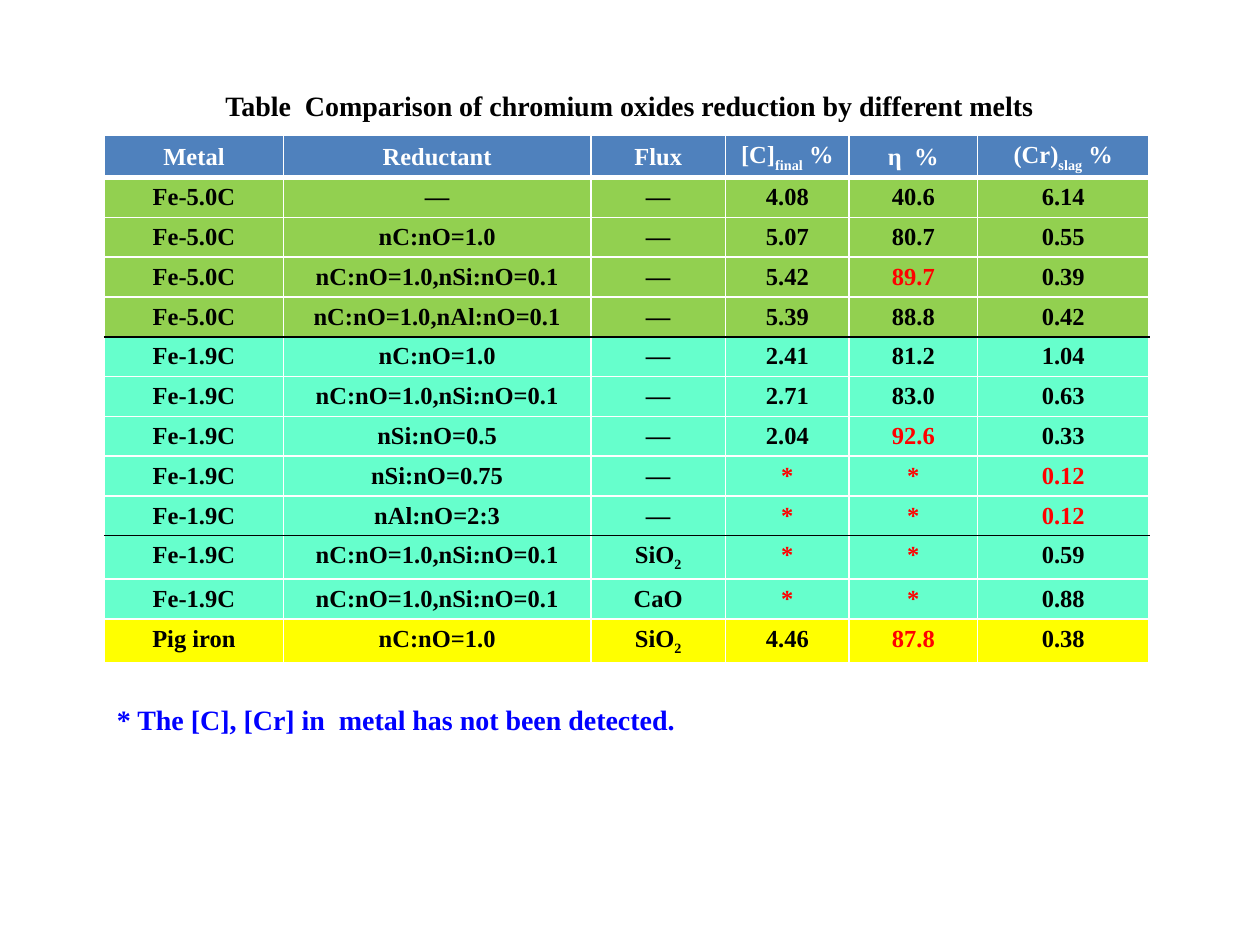
"""Builds a slide with a table comparing chromium oxide reduction by melt."""
from lxml import etree
from pptx import Presentation
from pptx.dml.color import RGBColor
from pptx.enum.text import MSO_ANCHOR, MSO_AUTO_SIZE, PP_ALIGN
from pptx.oxml.ns import qn
from pptx.util import Inches, Pt

CENTER, LEFT = PP_ALIGN.CENTER, PP_ALIGN.LEFT
TOP, MIDDLE = MSO_ANCHOR.TOP, MSO_ANCHOR.MIDDLE
GROW = MSO_AUTO_SIZE.SHAPE_TO_FIT_TEXT

WHITE, BLACK, RED, BLUE = "FFFFFF", "000000", "FF0000", "0000FF"
HEADER_FILL, GREEN, AQUA, YELLOW = "4F81BD", "92D050", "66FFCC", "FFFF00"
FILLS = [HEADER_FILL] + [GREEN] * 4 + [AQUA] * 7 + [YELLOW]
RED_VALUES = {"*", "89.7", "92.6", "87.8", "0.12"}
RULES_BELOW = {0: (WHITE, 3), 4: (BLACK, 1), 9: (BLACK, 1)}
PLAIN_RULE = (WHITE, 1)

COLUMN_WIDTHS = [1.42, 2.44, 1.07, 0.98, 1.02, 1.36]
HEADER_HEIGHT = Inches(0.34)
BODY_HEIGHT = Inches(3.16) // 10
SUBSCRIPT_HEIGHT = Inches(0.69) // 2

ROWS = [
    ["Metal", "Reductant", "Flux", "[C]_final_ %", "η  %", "(Cr)_slag_ %"],
    ["Fe-5.0C", "—", "—", "4.08", "40.6", "6.14"],
    ["Fe-5.0C", "nC:nO=1.0", "—", "5.07", "80.7", "0.55"],
    ["Fe-5.0C", "nC:nO=1.0,nSi:nO=0.1", "—", "5.42", "89.7", "0.39"],
    ["Fe-5.0C", "nC:nO=1.0,nAl:nO=0.1", "—", "5.39", "88.8", "0.42"],
    ["Fe-1.9C", "nC:nO=1.0", "—", "2.41", "81.2", "1.04"],
    ["Fe-1.9C", "nC:nO=1.0,nSi:nO=0.1", "—", "2.71", "83.0", "0.63"],
    ["Fe-1.9C", "nSi:nO=0.5", "—", "2.04", "92.6", "0.33"],
    ["Fe-1.9C", "nSi:nO=0.75", "—", "*", "*", "0.12"],
    ["Fe-1.9C", "nAl:nO=2:3", "—", "*", "*", "0.12"],
    ["Fe-1.9C", "nC:nO=1.0,nSi:nO=0.1", "SiO_2_", "*", "*", "0.59"],
    ["Fe-1.9C", "nC:nO=1.0,nSi:nO=0.1", "CaO", "*", "*", "0.88"],
    ["Pig iron", "nC:nO=1.0", "SiO_2_", "4.46", "87.8", "0.38"],
]


def rgb(value):
    """Turn a hex string into a colour."""
    return RGBColor.from_string(value)


def write(frame, text, size=14, color=BLACK, align=LEFT, font="Times New Roman"):
    """Write bold text in which underscores enclose subscripts."""
    para = frame.paragraphs[0]
    para.alignment = align
    for index, part in enumerate(text.split("_")):
        if not part:
            continue
        span = para.add_run()
        span.text = part
        span.font.name = font
        span.font.size = Pt(size)
        span.font.bold = True
        span.font.color.rgb = rgb(color)
        if index % 2:
            span.font._element.set("baseline", "-25000")
    return para


def set_borders(cell, above, below):
    """Draw the four cell borders, which precede the fill."""
    sides = {"a:lnL": PLAIN_RULE, "a:lnR": PLAIN_RULE, "a:lnT": above, "a:lnB": below}
    properties = cell._tc.get_or_add_tcPr()
    for position, (tag, (color, width)) in enumerate(sides.items()):
        line = etree.Element(qn(tag), w=str(Pt(width)))
        fill = etree.SubElement(line, qn("a:solidFill"))
        etree.SubElement(fill, qn("a:srgbClr"), val=color)
        properties.insert(position, line)


class SlideBuilder:
    """Holds the page and draws each kind of element on it."""

    def __init__(self, deck):
        """Add a blank page to the deck."""
        self.page = deck.slides.add_slide(deck.slide_layouts[6])

    def text(self, text, left, top, width, height, wrap=True, **style):
        """Add a text box and return its paragraph."""
        box = self.page.shapes.add_textbox(*map(Inches, (left, top, width, height)))
        box.text_frame.word_wrap = wrap
        box.text_frame.auto_size = GROW
        return write(box.text_frame, text, **style)

    def table(self, rows, left, top, widths):
        """Add the table with its row heights, fills and rules."""
        heights = [HEADER_HEIGHT] + [
            SUBSCRIPT_HEIGHT if "_" in "".join(row) else BODY_HEIGHT for row in rows[1:]
        ]
        table = self.page.shapes.add_table(
            len(rows), len(widths), Inches(left), Inches(top),
            Inches(sum(widths)), sum(heights),
        ).table
        for column, width in zip(table.columns, widths):
            column.width = Inches(width)
        for index, values in enumerate(rows):
            table.rows[index].height = heights[index]
            above = RULES_BELOW.get(index - 1, PLAIN_RULE)
            below = RULES_BELOW.get(index, PLAIN_RULE)
            for cell, value in zip(table.rows[index].cells, values):
                cell.fill.solid()
                cell.fill.fore_color.rgb = rgb(FILLS[index])
                cell.vertical_anchor = TOP if index else MIDDLE
                cell.margin_left = cell.margin_right = cell.margin_top = Inches(0.05)
                cell.margin_bottom = Inches(0.04) if index else Inches(0.03)
                color = RED if value in RED_VALUES else BLACK
                write(cell.text_frame, value, color=color if index else WHITE, align=CENTER)
                set_borders(cell, above, below)


def main():
    """Build and save the deck."""
    deck = Presentation()
    deck.slide_width, deck.slide_height = Inches(10), Inches(7.5)
    builder = SlideBuilder(deck)
    builder.table(ROWS, 0.83, 1.07, COLUMN_WIDTHS)
    title = builder.text(
        "Table  Comparison of chromium oxides reduction by different melts",
        1.69, 0.6, 6.77, 0.42, size=16,
    )
    title.line_spacing = 1.2
    indent = Inches(0.39)
    properties = title._p.get_or_add_pPr()
    properties.set("marL", str(indent))
    properties.set("indent", str(-indent))
    builder.text(
        "* The [C], [Cr] in  metal has not been detected.",
        0.83, 5.53, 4.69, 0.37, wrap=False, size=16, color=BLUE,
    )
    deck.save("out.pptx")


if __name__ == "__main__":
    main()
